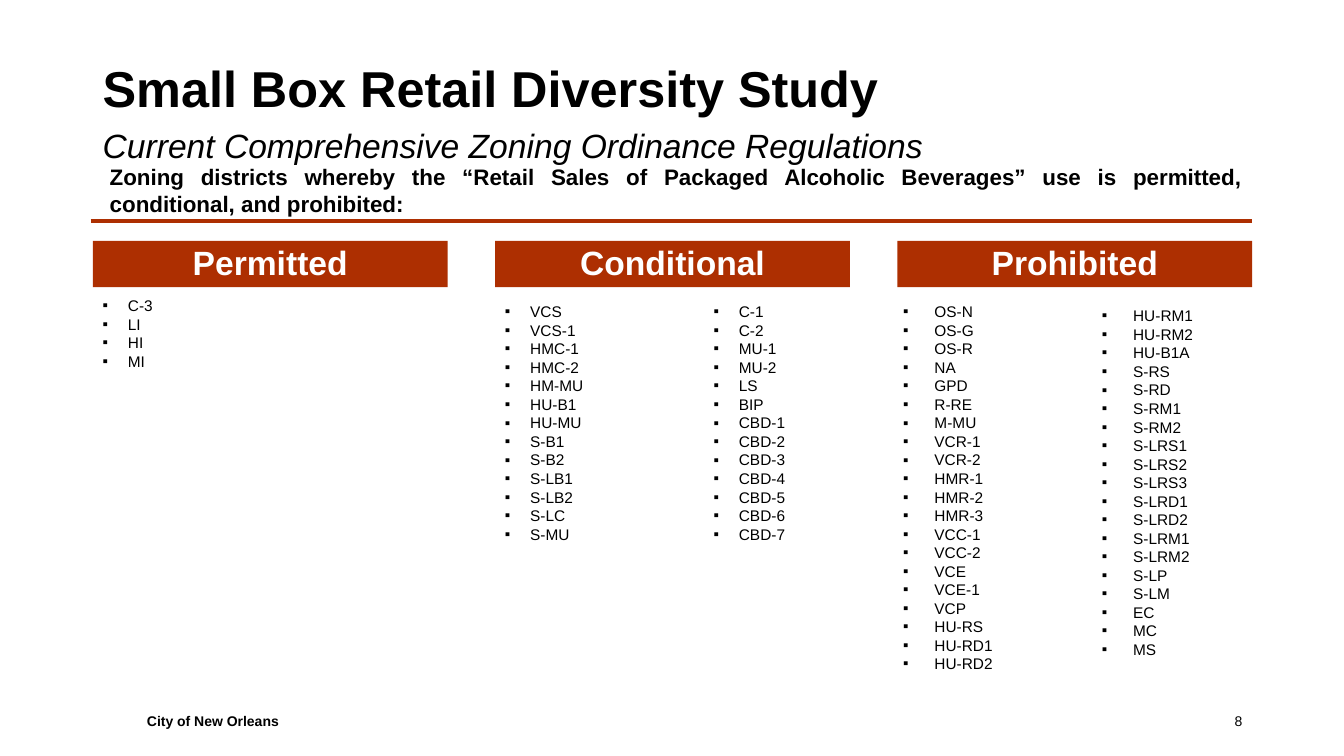
"""Build the slide on zoning districts for packaged alcohol sales."""
from lxml.etree import SubElement
from pptx import Presentation
from pptx.dml.color import RGBColor
from pptx.enum.shapes import MSO_CONNECTOR, MSO_SHAPE
from pptx.enum.text import MSO_ANCHOR, PP_ALIGN
from pptx.oxml.ns import qn
from pptx.util import Inches, Pt


class Theme:
    font = "Arial"
    black = RGBColor(0x00, 0x00, 0x00)
    white = RGBColor(0xFF, 0xFF, 0xFF)
    rust = RGBColor(0xAD, 0x2F, 0x01)
    title_size = Pt(36)
    heading_size = Pt(24)
    intro_size = Pt(16)
    list_size = Pt(11)
    list_pitch = Pt(13.23)
    footer_size = Pt(10)
    rule_width = Pt(2.75)


TITLE = "Small Box Retail Diversity Study"
SUBTITLE = "Current Comprehensive Zoning Ordinance Regulations"
INTRO = ("Zoning districts whereby the “Retail Sales of Packaged Alcoholic Beverages” "
         "use is permitted, conditional, and prohibited:")
FOOTER = "City of New Orleans"
PAGE_NUMBER = "8"
HEADINGS = ["Permitted", "Conditional", "Prohibited"]
DISTRICT_LISTS = [
    {"box": (0.92, 2.89, 1.88, 3.26), "indent": 0.25,
     "districts": ["C-3", "LI", "HI", "MI"]},
    {"box": (4.91, 2.95, 1.68, 3.16), "indent": 0.25,
     "districts": ["VCS", "VCS-1", "HMC-1", "HMC-2", "HM-MU", "HU-B1", "HU-MU",
                   "S-B1", "S-B2", "S-LB1", "S-LB2", "S-LC", "S-MU"]},
    {"box": (6.98, 2.95, 1.36, 3.16), "indent": 0.25,
     "districts": ["C-1", "C-2", "MU-1", "MU-2", "LS", "BIP", "CBD-1", "CBD-2",
                   "CBD-3", "CBD-4", "CBD-5", "CBD-6", "CBD-7"]},
    {"box": (8.86, 2.95, 2.07, 3.8), "indent": 0.31,
     "districts": ["OS-N", "OS-G", "OS-R", "NA", "GPD", "R-RE", "M-MU", "VCR-1",
                   "VCR-2", "HMR-1", "HMR-2", "HMR-3", "VCC-1", "VCC-2", "VCE",
                   "VCE-1", "VCP", "HU-RS", "HU-RD1", "HU-RD2"]},
    {"box": (10.83, 2.99, 1.59, 3.62), "indent": 0.31,
     "districts": ["HU-RM1", "HU-RM2", "HU-B1A", "S-RS", "S-RD", "S-RM1", "S-RM2",
                   "S-LRS1", "S-LRS2", "S-LRS3", "S-LRD1", "S-LRD2", "S-LRM1",
                   "S-LRM2", "S-LP", "S-LM", "EC", "MC", "MS"]},
]
LEFT, RIGHT = 0.92, 12.42
HEADING_TOP, HEADING_WIDTH, HEADING_HEIGHT = 2.39, 3.52, 0.46
HEADING_STEP = (RIGHT - LEFT - HEADING_WIDTH) / (len(HEADINGS) - 1)


def inches(box):
    return [Inches(value) for value in box]


def style(paragraph, size, color=Theme.black, bold=False, italic=False, align=PP_ALIGN.LEFT):
    paragraph.alignment = align
    font = paragraph.font
    font.name, font.size, font.bold, font.italic = Theme.font, size, bold, italic
    font.color.rgb = color


def add_text(slide, box, text, size, anchor=MSO_ANCHOR.TOP, **look):
    frame = slide.shapes.add_textbox(*inches(box)).text_frame
    frame.word_wrap = True
    frame.vertical_anchor = anchor
    frame.text = text
    style(frame.paragraphs[0], size, **look)


def add_heading(slide, left, text):
    box = (left, HEADING_TOP, HEADING_WIDTH, HEADING_HEIGHT)
    shape = slide.shapes.add_shape(MSO_SHAPE.RECTANGLE, *inches(box))
    shape.shadow.inherit = False
    shape.fill.solid()
    shape.fill.fore_color.rgb = Theme.rust
    shape.line.fill.background()
    shape.text_frame.text = text
    shape.text_frame.vertical_anchor = MSO_ANCHOR.BOTTOM
    paragraph = shape.text_frame.paragraphs[0]
    paragraph.line_spacing = 0.9
    style(paragraph, Theme.heading_size, Theme.white, bold=True, align=PP_ALIGN.CENTER)


def add_district_list(slide, box, indent, districts):
    frame = slide.shapes.add_textbox(*inches(box)).text_frame
    frame.word_wrap = True
    frame.text = "\n".join(districts)
    for paragraph in frame.paragraphs:
        paragraph.line_spacing = Theme.list_pitch
        properties = paragraph._p.get_or_add_pPr()
        properties.set("marL", str(Inches(indent)))
        properties.set("indent", str(-Inches(indent)))
        SubElement(properties, qn("a:buFont"), typeface=Theme.font)
        SubElement(properties, qn("a:buChar"), char="▪")
        style(paragraph, Theme.list_size)


def add_rule(slide):
    rule = slide.shapes.add_connector(MSO_CONNECTOR.STRAIGHT, *inches((0.9, 2.19, RIGHT, 2.19)))
    rule.line.color.rgb = Theme.rust
    rule.line.width = Theme.rule_width
    SubElement(rule._element.spPr, qn("a:effectLst"))


def main():
    presentation = Presentation()
    presentation.slide_width, presentation.slide_height = Inches(13.33), Inches(7.5)
    slide = presentation.slides.add_slide(presentation.slide_layouts[6])
    add_rule(slide)
    add_text(slide, (1.36, 6.95, 7.56, 0.4), FOOTER, Theme.footer_size,
             MSO_ANCHOR.MIDDLE, bold=True)
    add_text(slide, (9.42, 6.95, 3, 0.4), PAGE_NUMBER, Theme.footer_size,
             MSO_ANCHOR.MIDDLE, align=PP_ALIGN.RIGHT)
    add_text(slide, (LEFT, 0.4, RIGHT - LEFT, 0.94), TITLE, Theme.title_size,
             MSO_ANCHOR.MIDDLE, bold=True)
    add_text(slide, (LEFT, 1.19, RIGHT - LEFT, 0.9), SUBTITLE, Theme.heading_size, italic=True)
    add_text(slide, (0.99, 1.57, 11.43, 0.64), INTRO, Theme.intro_size,
             bold=True, align=PP_ALIGN.JUSTIFY)
    for index, heading in enumerate(HEADINGS):
        add_heading(slide, LEFT + index * HEADING_STEP, heading)
    for district_list in DISTRICT_LISTS:
        add_district_list(slide, **district_list)
    presentation.save("out.pptx")


if __name__ == "__main__":
    main()
